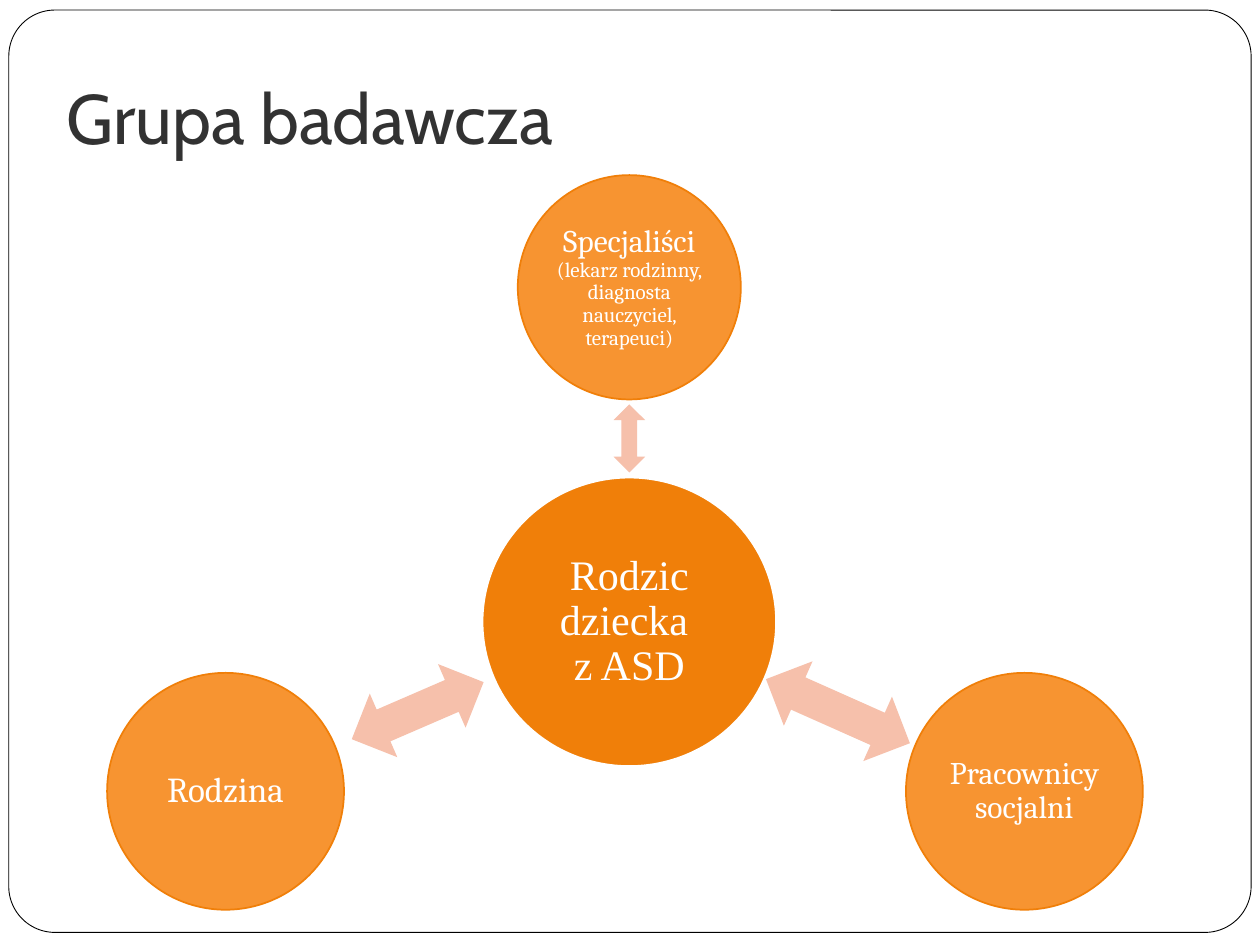
"""Build the research group slide: a parent at the hub, linked to three support circles."""
from dataclasses import dataclass

from pptx import Presentation
from pptx.dml.color import RGBColor
from pptx.enum.shapes import MSO_SHAPE as Shape
from pptx.enum.text import MSO_ANCHOR as Anchor, PP_ALIGN as Align
from pptx.util import Inches, Pt


@dataclass(frozen=True)
class Theme:
    """Colours, fonts and type sizes."""
    paper: str = "FFFFFF"
    frame: str = "000000"
    heading: str = "323232"
    hub: str = "F07F09"
    satellite: str = "F79431"
    arrow: str = "F6C0AB"
    heading_font: str = "Cabin"
    hub_font: str = "Times New Roman"
    body_font: str = "Cambria"
    heading_size: int = 40
    hub_size: int = 24
    large_size: int = 20
    body_size: int = 18
    detail_size: int = 12


class SlideBuilder:
    """Draw styled elements on the current slide."""

    def __init__(self, slide, theme):
        self.slide = slide
        self.theme = theme

    def shape(self, kind, box, fill, line=None, width=1):
        item = self.slide.shapes.add_shape(kind, *map(Inches, box))
        item.shadow.inherit = False
        item.fill.solid()
        item.fill.fore_color.rgb = RGBColor.from_string(fill)
        if line:
            item.line.color.rgb = RGBColor.from_string(line)
            item.line.width = Pt(width)
        else:
            item.line.fill.background()
        return item

    def style(self, run, font, size, color):
        run.font.name = font
        run.font.size = Pt(size)
        run.font.color.rgb = RGBColor.from_string(color)

    def frame(self, box):
        border = self.shape(Shape.ROUNDED_RECTANGLE, box, self.theme.paper, self.theme.frame, 0.5)
        border.adjustments[0] = 0.05

    def title(self, text, box):
        frame = self.slide.shapes.add_textbox(*map(Inches, box)).text_frame
        frame.word_wrap = True
        frame.vertical_anchor = Anchor.BOTTOM
        frame.margin_bottom = Inches(0.1)
        frame.text = text
        theme = self.theme
        self.style(frame.paragraphs[0].runs[0], theme.heading_font, theme.heading_size, theme.heading)

    def circle(self, box, parts, font, fill, line):
        frame = self.shape(Shape.OVAL, box, fill, line).text_frame
        frame.word_wrap = True
        frame.vertical_anchor = Anchor.MIDDLE
        frame.margin_left = frame.margin_right = Inches(0.03)
        frame.margin_top = frame.margin_bottom = Inches(0.03)
        paragraph = frame.paragraphs[0]
        paragraph.text = parts[0][0]
        for text, _ in parts[1:]:
            paragraph.add_run().text = text
        paragraph.alignment = Align.CENTER
        paragraph.line_spacing = 0.9
        sizes = [size for _, size in parts]
        if len(parts) == 1:
            sizes *= len(paragraph.runs)
        for run, size in zip(paragraph.runs, sizes):
            self.style(run, font, size, self.theme.paper)

    def arrow(self, box, rotation):
        self.shape(Shape.UP_DOWN_ARROW, box, self.theme.arrow).rotation = rotation


def main():
    theme = Theme()
    deck = Presentation()
    deck.slide_width, deck.slide_height = Inches(10), Inches(7.5)
    builder = SlideBuilder(deck.slides.add_slide(deck.slide_layouts[6]), theme)

    builder.frame((0.07, 0.08, 9.86, 7.32))
    builder.title("Grupa badawcza", (0.43, 0.21, 8.95, 1.15))
    builder.circle((3.83, 3.79, 2.33, 2.29), [("Rodzic dziecka \vz ASD", theme.hub_size)],
                   theme.hub_font, theme.hub, theme.paper)

    specialists = [("Specjaliści ", theme.body_size),
                   ("(lekarz rodzinny, diagnosta nauczyciel, terapeuci)", theme.detail_size)]
    satellites = [
        ((4.87, 3.21, 0.25, 0.54), 0, (4.11, 1.39, 1.77, 1.78), specialists),
        ((6.37, 5.02, 0.56, 1.25), 114, (7.19, 5.34, 1.88, 1.88),
         [("Pracownicy socjalni", theme.body_size)]),
        ((3.04, 5.07, 0.55, 1.14), 246.6, (0.85, 5.34, 1.88, 1.88),
         [("Rodzina", theme.large_size)]),
    ]
    for arrow_box, rotation, circle_box, parts in satellites:
        builder.arrow(arrow_box, rotation)
        builder.circle(circle_box, parts, theme.body_font, theme.satellite, theme.hub)

    deck.save("out.pptx")


if __name__ == "__main__":
    main()
